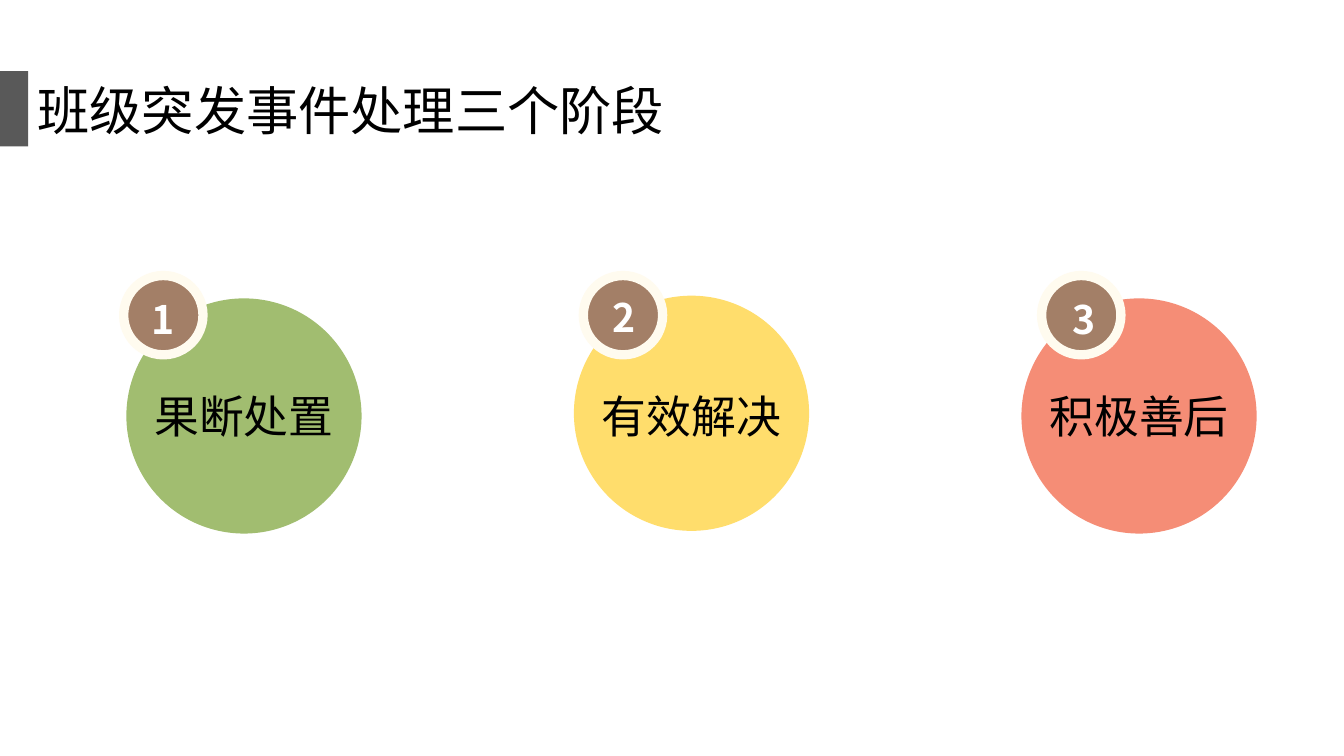
from lxml.etree import SubElement
from pptx import Presentation
from pptx.dml.color import RGBColor
from pptx.enum.shapes import MSO_SHAPE as Shape
from pptx.enum.text import MSO_AUTO_SIZE as AutoSize, PP_ALIGN as Align
from pptx.oxml.ns import qn
from pptx.util import Inches, Pt

FONT = "Noto Sans CJK SC"


def color(hex_code):
    return RGBColor.from_string(hex_code)


def add_block(slide, preset, left, top, width, height, fill, border=None):
    block = slide.shapes.add_shape(
        preset, Inches(left), Inches(top), Inches(width), Inches(height))
    block.shadow.inherit = False
    block.fill.solid()
    block.fill.fore_color.rgb = color(fill)
    if border:
        block.line.color.rgb = color(border)
        block.line.width = Pt(5)
    else:
        block.line.fill.background()


def add_label(slide, text, left, top, width, height, size,
              ink="000000", bold=False, align=Align.LEFT, wrap=True):
    label = slide.shapes.add_textbox(
        Inches(left), Inches(top), Inches(width), Inches(height))
    frame = label.text_frame
    frame.word_wrap = wrap
    frame.auto_size = AutoSize.SHAPE_TO_FIT_TEXT
    frame.text = text
    paragraph = frame.paragraphs[0]
    paragraph.alignment = align
    run = paragraph.runs[0]
    run.font.size = Pt(size)
    run.font.bold = bold
    run.font.name = FONT
    run.font.color.rgb = color(ink)
    SubElement(run._r.get_or_add_rPr(), qn("a:ea"), typeface=FONT)
    return frame


def add_heading(slide, left, top, text):
    bar_width = 0.21
    add_block(slide, Shape.RECTANGLE, left, top, bar_width, 0.56, "595959")
    frame = add_label(slide, text, left + bar_width, top + 0.01, 5.11, 0.55, 28)
    frame.margin_left = frame.margin_right = Inches(0.07)
    frame.margin_top = frame.margin_bottom = Inches(0.04)


def add_stage(slide, left, top, number, name, fill, disc_top, badge_left,
              digit_left, digit_top):
    disc = 1.75
    badge = 0.59
    add_block(slide, Shape.OVAL, left, top + disc_top, disc, disc, fill)
    add_block(slide, Shape.OVAL, left + badge_left, top, badge, badge,
              "A37F67", "FFFBEF")
    add_label(slide, str(number), left + digit_left, top + digit_top,
              0.38, 0.45, 21, ink="FFFFFF", bold=True, wrap=False)
    add_label(slide, name, left, top + 0.79, disc, 0.5, 24, align=Align.CENTER)


def main():
    deck = Presentation()
    deck.slide_width = Inches(10)
    deck.slide_height = deck.slide_width * 9 // 16
    slide = deck.slides.add_slide(deck.slide_layouts[6])

    add_heading(slide, 0, 0.53, "班级突发事件处理三个阶段")

    stages = [
        ("果断处置", "A1BD70", 0.17, -0.02, 0.09, 0.1),
        ("有效解决", "FFDD6C", 0.15, 0.07, 0.19, 0.08),
        ("积极善后", "F58D76", 0.17, 0.15, 0.28, 0.1),
    ]
    first_left, pitch, top = 0.94, 3.33, 2.05
    for index, stage in enumerate(stages):
        add_stage(slide, first_left + index * pitch, top, index + 1, *stage)

    deck.save("out.pptx")


if __name__ == "__main__":
    main()
